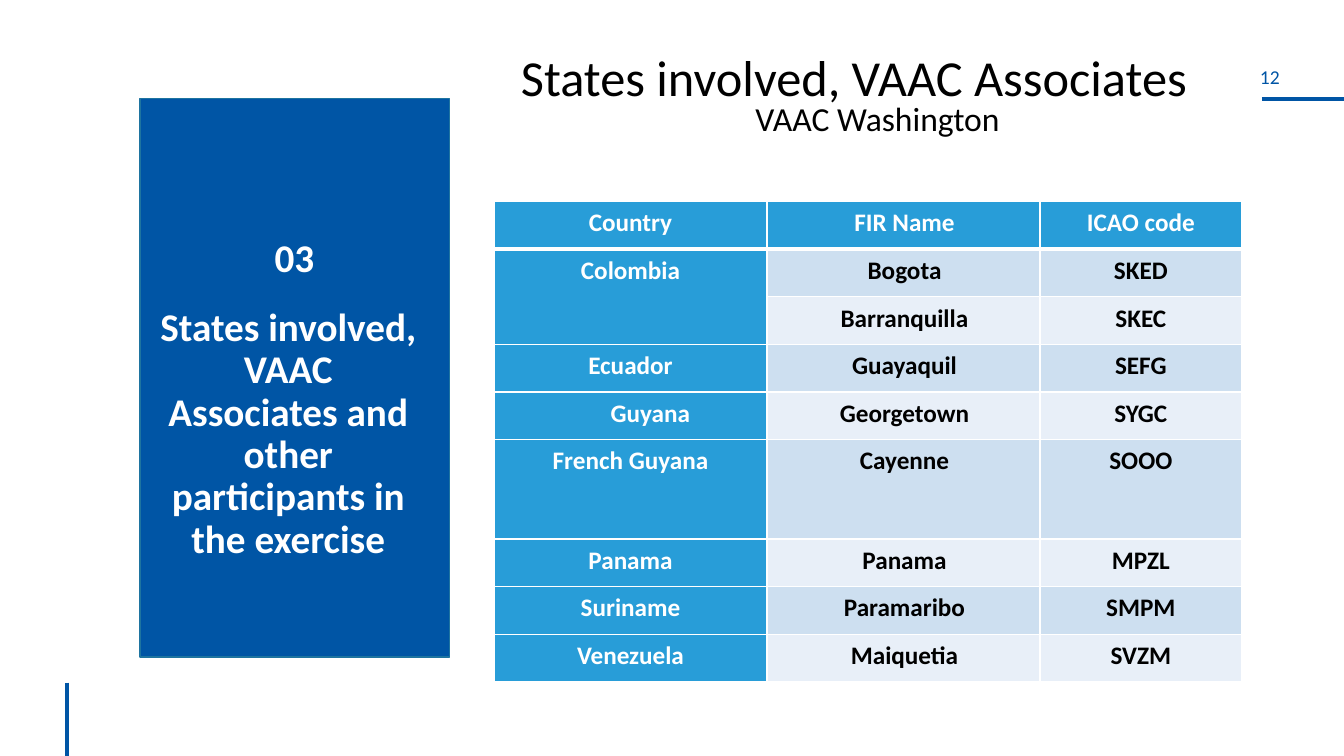
from dataclasses import dataclass

from lxml import etree
from pptx import Presentation
from pptx.dml.color import RGBColor
from pptx.enum.shapes import MSO_CONNECTOR, MSO_SHAPE
from pptx.enum.text import MSO_ANCHOR, PP_ALIGN
from pptx.oxml.ns import qn
from pptx.util import Cm, Pt

STRAIGHT = MSO_CONNECTOR.STRAIGHT
RECTANGLE = MSO_SHAPE.RECTANGLE
TOP = MSO_ANCHOR.TOP
CENTER = PP_ALIGN.CENTER

FONT = "Calibri"
NAVY, SKY, WHITE, BLACK = "0055A5", "289DD8", "FFFFFF", "000000"
BANDS = ("CDDFF0", "E8EFF8")
SLIDE_WIDTH, SLIDE_HEIGHT = 33.87, 19.05


@dataclass
class Label:
    text: str
    left: float
    top: float
    width: float
    height: float
    size: float
    color: str
    bold: bool = False
    line_spacing: float = 1.0
    margin_x: float = 0.25
    margin_y: float = 0.13
    wrap: bool = True


@dataclass
class Rule:
    x1: float
    y1: float
    x2: float
    y2: float


@dataclass
class Region:
    country: str
    fir: str
    code: str
    height: float = 1.2
    country_indent: float = 0


LABELS = [
    Label("12", 30.48, 1.63, 3.05, 0.84, 14, NAVY, margin_x=0, margin_y=0, wrap=False),
    Label("States involved, VAAC Associates and other participants in the exercise",
          3.66, 7.62, 7.21, 4.01, 28, WHITE, bold=True, line_spacing=0.9),
    Label("03", 6.43, 5.89, 1.98, 1.55, 28, WHITE, bold=True, line_spacing=0.9),
    Label("States involved, VAAC Associates", 10.87, 1.04, 21.31, 1.8, 36, BLACK),
    Label("VAAC Washington", 11.46, 2.34, 21.31, 1.27, 24, BLACK),
]
RULES = [
    Rule(31.8, 2.49, SLIDE_WIDTH, 2.49),
    Rule(1.68, 17.2, 1.68, SLIDE_HEIGHT),
]
# An empty country continues the cell above
REGIONS = [
    Region("Country", "FIR Name", "ICAO code"),
    Region("Colombia", "Bogota", "SKED"),
    Region("", "Barranquilla", "SKEC"),
    Region("Ecuador", "Guayaquil", "SEFG"),
    Region("Guyana", "Georgetown", "SYGC", country_indent=1),
    Region("French Guyana", "Cayenne", "SOOO", height=2.5),
    Region("Panama", "Panama", "MPZL"),
    Region("Suriname", "Paramaribo", "SMPM"),
    Region("Venezuela", "Maiquetia", "SVZM"),
]
COLUMN_WIDTHS = (6.88, 6.88, 5.08)


def rgb(color: str) -> RGBColor:
    return RGBColor.from_string(color)


def write_text(frame, text: str, *, size: float, color: str, bold: bool = False,
               line_spacing: float = 1.0, space_after: float = 0,
               indent: float = 0) -> None:
    paragraph = frame.paragraphs[0]
    paragraph.alignment = CENTER
    paragraph.line_spacing = line_spacing
    paragraph.space_after = Pt(space_after)
    if indent:
        paragraph._p.get_or_add_pPr().set("marL", str(Cm(indent)))
    run = paragraph.add_run()
    run.text = text
    run.font.name = FONT
    run.font.size = Pt(size)
    run.font.bold = bold
    run.font.color.rgb = rgb(color)


def add_label(slide, label: Label) -> None:
    box = slide.shapes.add_textbox(Cm(label.left), Cm(label.top),
                                   Cm(label.width), Cm(label.height))
    frame = box.text_frame
    frame.word_wrap = label.wrap
    frame.vertical_anchor = TOP
    frame.margin_left = frame.margin_right = Cm(label.margin_x)
    frame.margin_top = frame.margin_bottom = Cm(label.margin_y)
    write_text(frame, label.text, size=label.size, color=label.color,
               bold=label.bold, line_spacing=label.line_spacing)


def add_rule(slide, rule: Rule) -> None:
    connector = slide.shapes.add_connector(STRAIGHT, Cm(rule.x1), Cm(rule.y1),
                                           Cm(rule.x2), Cm(rule.y2))
    connector.line.color.rgb = rgb(NAVY)
    connector.line.width = Pt(3)
    etree.SubElement(connector._element.spPr, qn("a:effectLst"))


def add_panel(slide) -> None:
    panel = slide.shapes.add_shape(RECTANGLE, Cm(3.53), Cm(2.49), Cm(7.8), Cm(14.07))
    panel.shadow.inherit = False
    panel.fill.solid()
    panel.fill.fore_color.rgb = rgb(NAVY)
    panel.line.color.rgb = rgb("1E74A0")
    panel.line.width = Pt(1)


def set_borders(cell, row: int) -> None:
    properties = cell._tc.get_or_add_tcPr()
    widths = {"a:lnL": 1, "a:lnR": 1, "a:lnT": 3 if row == 1 else 1,
              "a:lnB": 3 if row == 0 else 1}
    for tag, width in widths.items():
        border = etree.SubElement(properties, qn(tag), w=str(Pt(width)))
        fill = etree.SubElement(border, qn("a:solidFill"))
        etree.SubElement(fill, qn("a:srgbClr"), val=WHITE)


def add_region_table(slide) -> None:
    frame = slide.shapes.add_table(
        len(REGIONS), len(COLUMN_WIDTHS), Cm(12.45), Cm(5.08),
        Cm(sum(COLUMN_WIDTHS)), Cm(sum(region.height for region in REGIONS)))
    table = frame.table
    for column, width in enumerate(COLUMN_WIDTHS):
        table.columns[column].width = Cm(width)
    for row, region in enumerate(REGIONS):
        table.rows[row].height = Cm(region.height)
        texts = (region.country, region.fir, region.code)
        indents = (region.country_indent, 0.05, 0)
        for column, text in enumerate(texts):
            heading = row == 0 or column == 0
            cell = table.cell(row, column)
            cell.margin_left = cell.margin_right = Cm(0.18)
            cell.margin_top = cell.margin_bottom = 0
            set_borders(cell, row)
            cell.fill.solid()
            cell.fill.fore_color.rgb = rgb(SKY if heading else BANDS[(row - 1) % 2])
            if text:
                write_text(cell.text_frame, text, size=18, bold=True,
                           color=WHITE if heading else BLACK, line_spacing=1.2,
                           space_after=10 if column == 2 else 0,
                           indent=indents[column])
            else:
                table.cell(row - 1, column).merge(cell)


def main() -> None:
    presentation = Presentation()
    presentation.slide_width = Cm(SLIDE_WIDTH)
    presentation.slide_height = Cm(SLIDE_HEIGHT)
    slide = presentation.slides.add_slide(presentation.slide_layouts[6])

    # Page rules and side panel
    for rule in RULES:
        add_rule(slide, rule)
    add_panel(slide)

    # Titles and page number
    for label in LABELS:
        add_label(slide, label)

    # Flight information regions
    add_region_table(slide)
    presentation.save("out.pptx")


if __name__ == "__main__":
    main()
